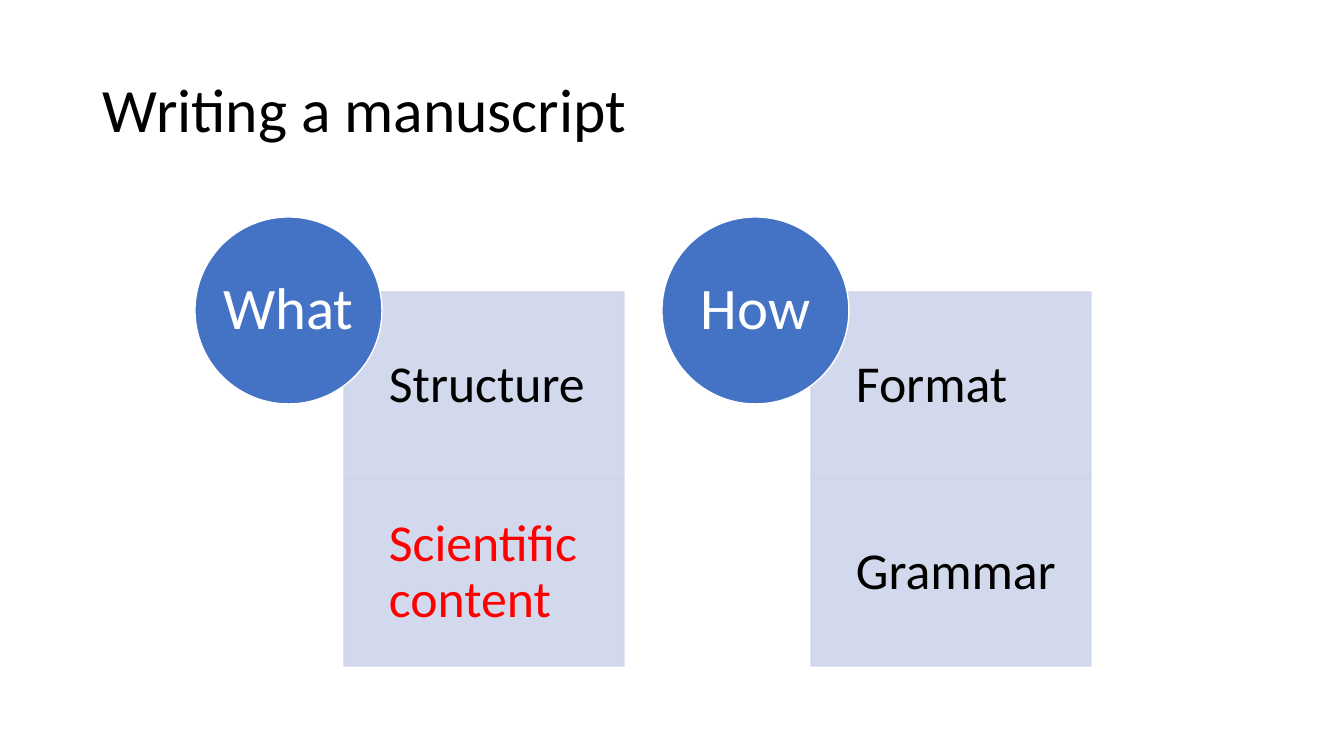
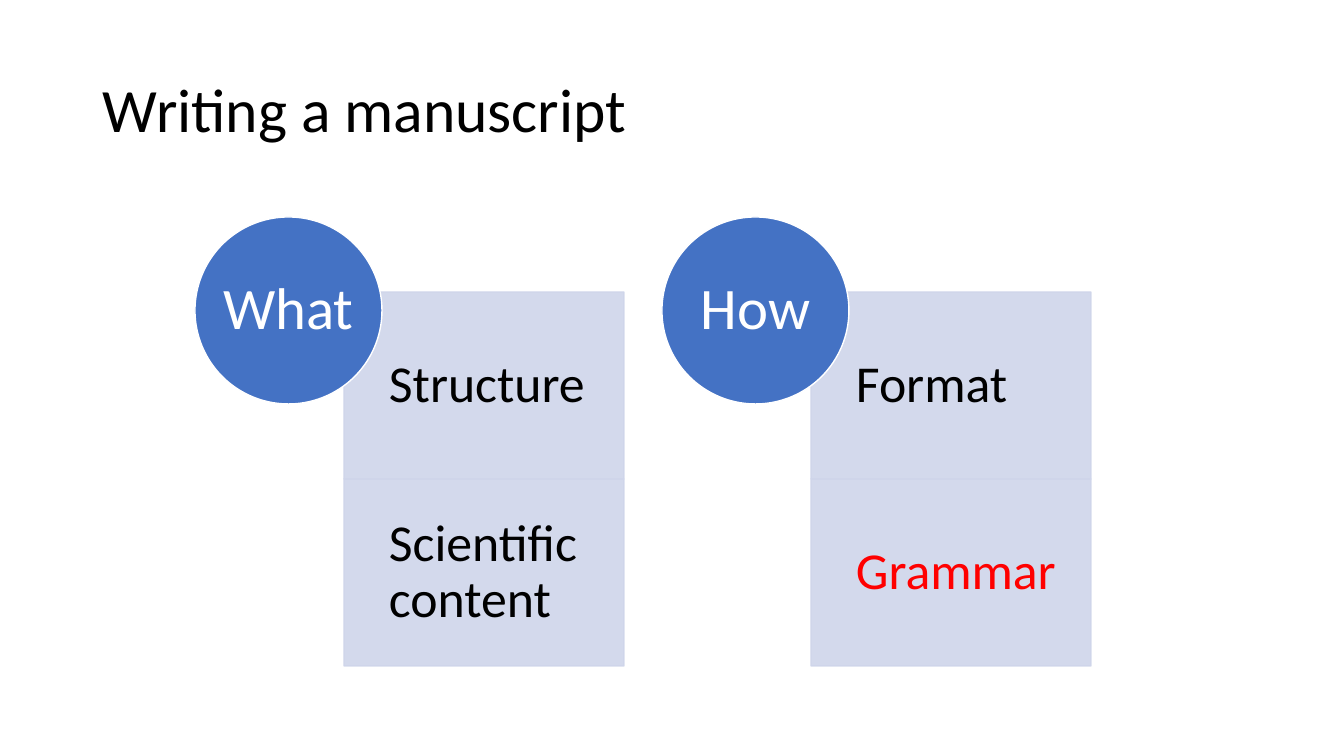
import lxml.etree
import pptx
import pptx.util
import pptx.dml.color
import pptx.enum.shapes
import pptx.enum.text
import pptx.oxml.ns

SCALE = 914400 / 100.8  # EMU in one px
PAGE_WIDTH, PAGE_HEIGHT = 1344, 756

FONT = "Calibri"
BLACK, WHITE, RED = "000000", "FFFFFF", "FF0000"
BLUE, PALE = "4472C4", "CFD5EA"

TITLE = "Writing a manuscript"
COLUMNS = [
    ("What", ["Structure", "Scientific content"]),
    ("How", ["Format", "Grammar"]),
]
HIGHLIGHTS = ["Scientific content", "Grammar"]  # one per slide

# Column layout: a circle overlapping the corner of a stack of cards
COLUMN_LEFT, COLUMN_TOP, COLUMN_PITCH = 195, 217, 467
CIRCLE_SIZE = 187
CARD_SHIFT, CARD_DROP = 149, 75
CARD_WIDTH, CARD_HEIGHT = 280, 187

SHAPES = pptx.enum.shapes.MSO_SHAPE
ALIGN = pptx.enum.text.PP_ALIGN


def px(length):
    return pptx.util.Emu(round(length * SCALE))


def color(value):
    return pptx.dml.color.RGBColor.from_string(value)


def paint(fill, value, opacity=100):
    """Fill with a solid colour, see-through below 100 percent."""
    fill.solid()
    fill.fore_color.rgb = color(value)
    if opacity < 100:
        solid = fill._xPr.find(pptx.oxml.ns.qn("a:solidFill"))
        lxml.etree.SubElement(solid[0], pptx.oxml.ns.qn("a:alpha"),
                              val=str(opacity * 1000))


def write(box, text, size, ink=BLACK, align=ALIGN.LEFT, insets=(0, 0, 0, 0)):
    """Put one paragraph in a box; insets are left, top, right, bottom."""
    frame = box.text_frame
    frame.word_wrap = True
    frame.vertical_anchor = pptx.enum.text.MSO_ANCHOR.MIDDLE
    (frame.margin_left, frame.margin_top,
     frame.margin_right, frame.margin_bottom) = map(px, insets)
    para = frame.paragraphs[0]
    para.alignment = align
    para.line_spacing = 0.9
    span = para.add_run()
    span.text = text
    span.font.name = FONT
    span.font.size = pptx.util.Pt(size)
    span.font.color.rgb = color(ink)


def add_shape(page, kind, left, top, width, height, fill, line, opacity=100):
    shape = page.shapes.add_shape(kind, px(left), px(top), px(width), px(height))
    shape.shadow.inherit = False
    paint(shape.fill, fill, opacity)
    paint(shape.line.fill, line, opacity)
    shape.line.width = pptx.util.Pt(1)
    return shape


def add_title(page, text):
    box = page.shapes.add_textbox(px(93), px(40), px(1159), px(146))
    write(box, text, 44, insets=(10, 5, 10, 5))


def add_column(page, left, heading, topics, highlight):
    # Cards first, so that the circle lies over them
    for row, topic in enumerate(topics):
        top = COLUMN_TOP + CARD_DROP + row * CARD_HEIGHT
        card = add_shape(page, SHAPES.RECTANGLE, left + CARD_SHIFT, top,
                         CARD_WIDTH, CARD_HEIGHT, PALE, PALE, opacity=90)
        write(card, topic, 37, ink=RED if topic == highlight else BLACK,
              insets=(45, 29, 29, 29))
    circle = add_shape(page, SHAPES.OVAL, left, COLUMN_TOP,
                       CIRCLE_SIZE, CIRCLE_SIZE, BLUE, WHITE)
    write(circle, heading, 42, ink=WHITE, align=ALIGN.CENTER)


def main():
    deck = pptx.Presentation()
    deck.slide_width, deck.slide_height = px(PAGE_WIDTH), px(PAGE_HEIGHT)
    for highlight in HIGHLIGHTS:
        page = deck.slides.add_slide(deck.slide_layouts[6])
        add_title(page, TITLE)
        for index, (heading, topics) in enumerate(COLUMNS):
            add_column(page, COLUMN_LEFT + index * COLUMN_PITCH,
                       heading, topics, highlight)
    deck.save("out.pptx")


if __name__ == "__main__":
    main()
